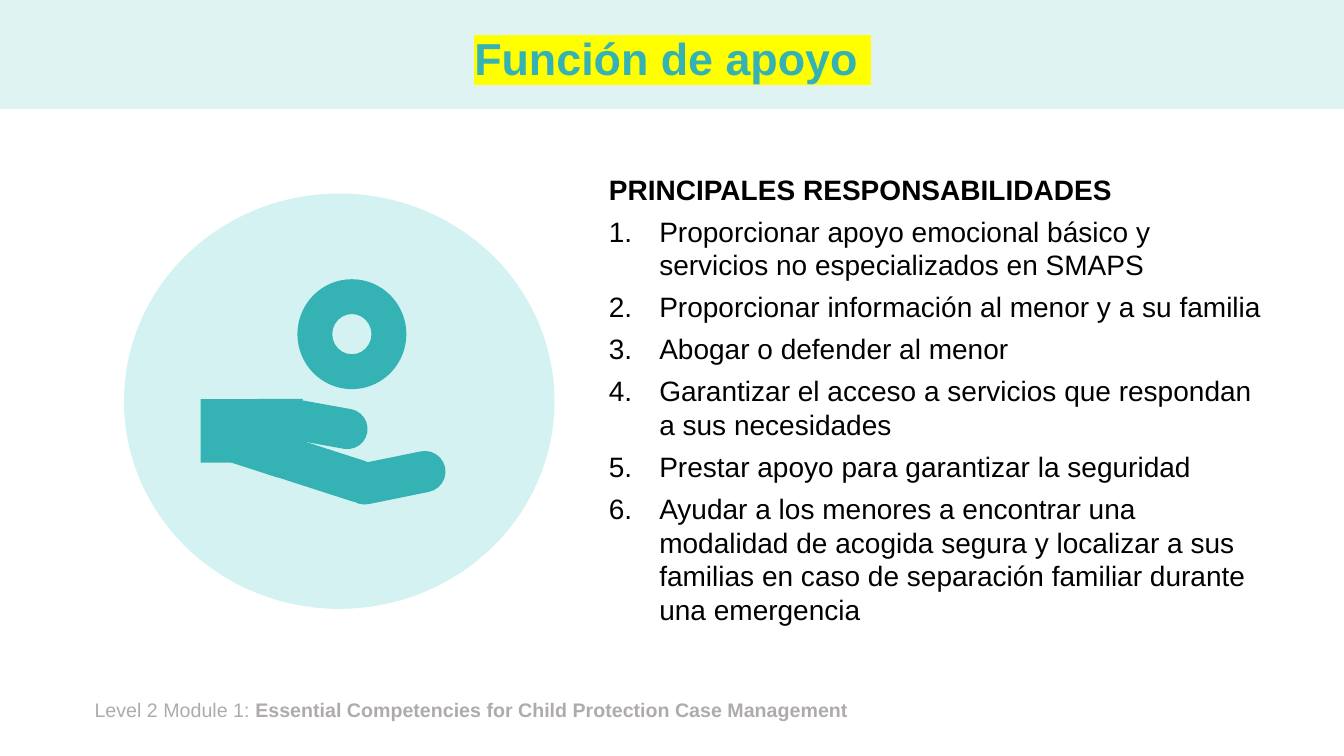
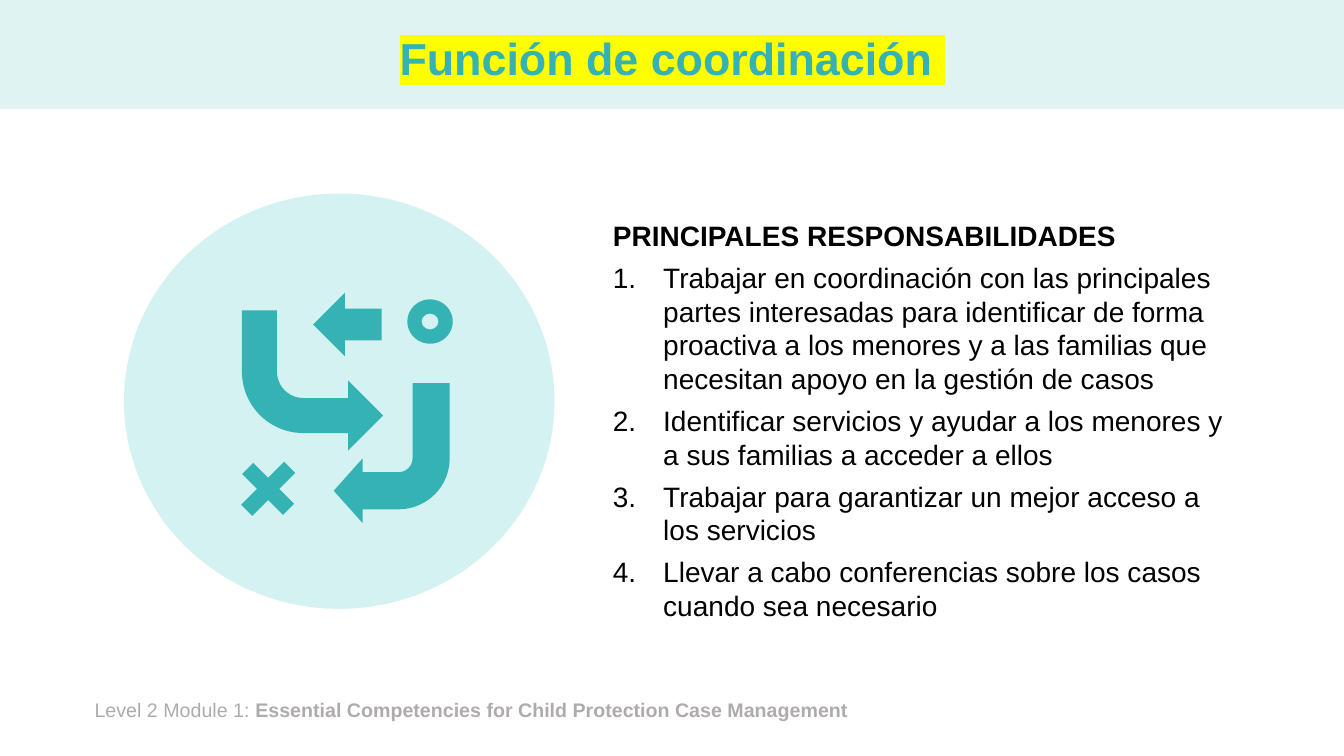
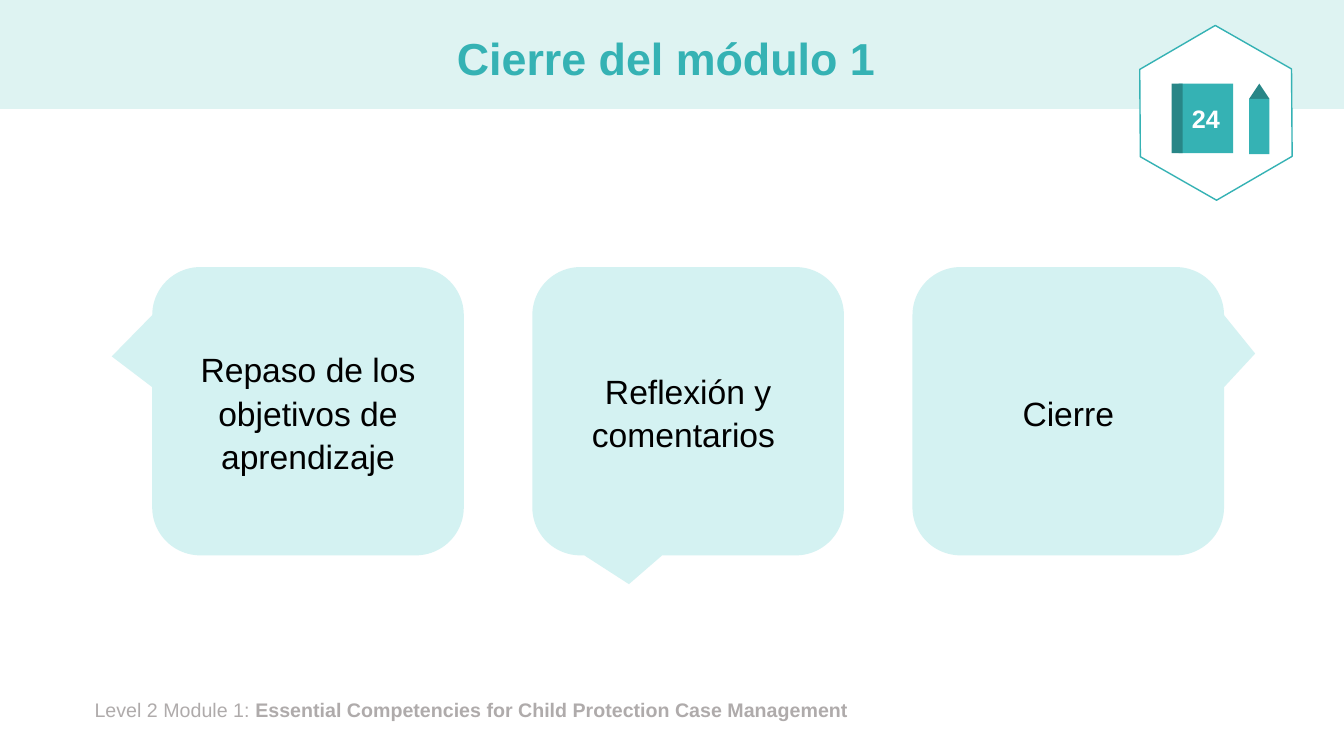
from lxml import etree
from pptx import Presentation
from pptx.dml.color import RGBColor
from pptx.enum.shapes import MSO_SHAPE
from pptx.enum.text import MSO_ANCHOR, PP_ALIGN
from pptx.oxml.ns import qn
from pptx.util import Emu, Pt

PX = 9144
FONT = "Arial"
COLORS = {
    "band": "DEF3F2",
    "bubble": "D4F2F2",
    "teal": "35B2B4",
    "dark teal": "288687",
    "footer": "AFABAB",
    "highlight": "FFFF00",
    "black": "000000",
    "white": "FFFFFF",
}
TITLES = [
    ("Función de apoyo ", True),
    ("Función de coordinación ", True),
    ("Cierre del módulo 1 ", False),
]
FOOTER = [
    ("Level 2 Module 1: ", False),
    ("Essential Competencies for Child Protection Case Management", True),
]
HEADING = "PRINCIPALES RESPONSABILIDADES"
DUTIES = [
    ((594, 166, 672, 507), [
        "Proporcionar apoyo emocional básico y servicios no especializados en SMAPS",
        "Proporcionar información al menor y a su familia",
        "Abogar o defender al menor",
        "Garantizar el acceso a servicios que respondan a sus necesidades",
        "Prestar apoyo para garantizar la seguridad",
        "Ayudar a los menores a encontrar una modalidad de acogida segura y localizar "
        "a sus familias en caso de separación familiar durante una emergencia",
    ]),
    ((598, 212, 643, 414), [
        "Trabajar en coordinación con las principales partes interesadas para identificar "
        "de forma proactiva a los menores y a las familias que necesitan apoyo en la "
        "gestión de casos",
        "Identificar servicios y ayudar a los menores y a sus familias a acceder a ellos",
        "Trabajar para garantizar un mejor acceso a los servicios",
        "Llevar a cabo conferencias sobre los casos cuando sea necesario",
    ]),
]
HAND_AND_COIN = [
    (MSO_SHAPE.ROUNDED_RECTANGLE, (293, 399, 42, 130), 107.9, [0.5]),
    (MSO_SHAPE.ROUNDED_RECTANGLE, (371, 423, 41, 102), 78.5, [0.5]),
    (MSO_SHAPE.ROUNDED_RECTANGLE, (299, 375, 40, 92), 100.2, [0.5]),
    (MSO_SHAPE.FLOWCHART_MANUAL_INPUT, (239, 386, 50, 82), 17.9, []),
    (MSO_SHAPE.RECTANGLE, (199, 396, 73, 63), 0, []),
    (MSO_SHAPE.DONUT, (295, 277, 108, 109), 0, [0.32]),
]
ROUTE = [
    (MSO_SHAPE.DOWN_ARROW, (313, 288, 63, 68), 90, []),
    (MSO_SHAPE.BENT_ARROW, (240, 308, 140, 139), 0, []),
    (MSO_SHAPE.BENT_ARROW, (331, 380, 115, 139), 180, [0.32, 0.28, 0.25, 0.44]),
    (MSO_SHAPE.MATH_PLUS, (227, 444, 78, 82), 45, [0.2]),
    (MSO_SHAPE.DONUT, (404, 297, 45, 44), 0, [0.32]),
]
CLOSING_STEPS = [
    ("Repaso de los objetivos de aprendizaje", [-0.63, -0.19]),
    ("Reflexión y comentarios ", [-0.19, 0.6]),
    ("Cierre", [0.6, -0.2]),
]


def add_piece(slide, kind, box, color, rotation=0, adjustments=()):
    piece = slide.shapes.add_shape(kind, *[Emu(n * PX) for n in box])
    piece.shadow.inherit = False
    piece.fill.solid()
    piece.fill.fore_color.rgb = RGBColor.from_string(COLORS[color])
    piece.line.fill.background()
    piece.rotation = rotation
    for index, value in enumerate(adjustments):
        piece.adjustments[index] = value
    return piece


def style_runs(paragraph, size, color, bold=False):
    for run in paragraph.runs:
        run.font.size = Pt(size)
        run.font.bold = bold
        run.font.color.rgb = RGBColor.from_string(COLORS[color])
        run.font.name = FONT


prs = Presentation()
prs.slide_width = Emu(1333 * PX)
prs.slide_height = Emu(750 * PX)

slides = []
for title, highlighted in TITLES:
    slide = prs.slides.add_slide(prs.slide_layouts[6])
    slides.append(slide)
    add_piece(slide, MSO_SHAPE.RECTANGLE, (0, 0, 1333, 108), "band")

    footer = slide.shapes.add_textbox(*[Emu(n * PX) for n in (84, 687, 1056, 34)]).text_frame
    footer.word_wrap = True
    for text, bold in FOOTER:
        footer.paragraphs[0].add_run().text = text
    style_runs(footer.paragraphs[0], 14, "footer")
    for run, (text, bold) in zip(footer.paragraphs[0].runs, FOOTER):
        run.font.bold = bold

    heading = slide.shapes.add_textbox(*[Emu(n * PX) for n in (92, 13, 1150, 95)]).text_frame
    heading.word_wrap = True
    heading.vertical_anchor = MSO_ANCHOR.MIDDLE
    heading.text = title
    title_line = heading.paragraphs[0]
    title_line.alignment = PP_ALIGN.CENTER
    title_line.line_spacing = 0.9
    style_runs(title_line, 32, "teal", True)
    if highlighted:
        highlight = etree.Element(qn("a:highlight"))
        etree.SubElement(highlight, qn("a:srgbClr"), val=COLORS["highlight"])
        title_line.runs[0].font._element.find(qn("a:solidFill")).addnext(highlight)

support, coordination, closing = slides

for slide, (box, duties), icon in zip(slides, DUTIES, [HAND_AND_COIN, ROUTE]):
    responsibilities = slide.shapes.add_textbox(*[Emu(n * PX) for n in box]).text_frame
    responsibilities.word_wrap = True
    responsibilities.text = "\n".join([HEADING] + duties)
    for index, paragraph in enumerate(responsibilities.paragraphs):
        paragraph.space_after = Pt(6)
        style_runs(paragraph, 20, "black", index == 0)
        if index > 0:
            properties = paragraph._p.get_or_add_pPr()
            properties.set("marL", str(50 * PX))
            properties.set("indent", str(-50 * PX))
            etree.SubElement(properties, qn("a:buAutoNum"), type="arabicPeriod")

    add_piece(slide, MSO_SHAPE.OVAL, (123, 192, 427, 412), "bubble")
    for kind, place, rotation, adjustments in icon:
        part = add_piece(slide, kind, place, "teal", rotation, adjustments)
        if kind == MSO_SHAPE.BENT_ARROW and rotation == 0:
            part._element.spPr.find(qn("a:xfrm")).set("flipV", "1")

for index, (text, pointer) in enumerate(CLOSING_STEPS):
    bubble = add_piece(closing, MSO_SHAPE.ROUNDED_RECTANGULAR_CALLOUT,
                       (151 + index * 377, 265, 309, 286), "bubble", 0, pointer)
    bubble.text_frame.word_wrap = True
    bubble.text_frame.vertical_anchor = MSO_ANCHOR.MIDDLE
    bubble.text_frame.text = text
    step = bubble.text_frame.paragraphs[0]
    step.alignment = PP_ALIGN.CENTER
    step.line_spacing = 1.07
    step.space_after = Pt(8)
    style_runs(step, 24, "black")

badge = add_piece(closing, MSO_SHAPE.HEXAGON, (1119, 37, 174, 150), "white", 29.7, [0.29])
badge.line.color.rgb = RGBColor.from_string(COLORS["teal"])
badge.line.width = Pt(1)

workbook = add_piece(closing, MSO_SHAPE.RECTANGLE, (1169, 83, 54, 69), "teal")
workbook.text_frame.vertical_anchor = MSO_ANCHOR.MIDDLE
workbook.text_frame.text = "24"
page_number = workbook.text_frame.paragraphs[0]
page_number.alignment = PP_ALIGN.CENTER
style_runs(page_number, 18, "white", True)

add_piece(closing, MSO_SHAPE.RECTANGLE, (1162, 83, 11, 69), "dark teal")
add_piece(closing, MSO_SHAPE.ISOSCELES_TRIANGLE, (1239, 83, 20, 15), "dark teal")
add_piece(closing, MSO_SHAPE.RECTANGLE, (1239, 98, 20, 55), "teal")

prs.save("out.pptx")
